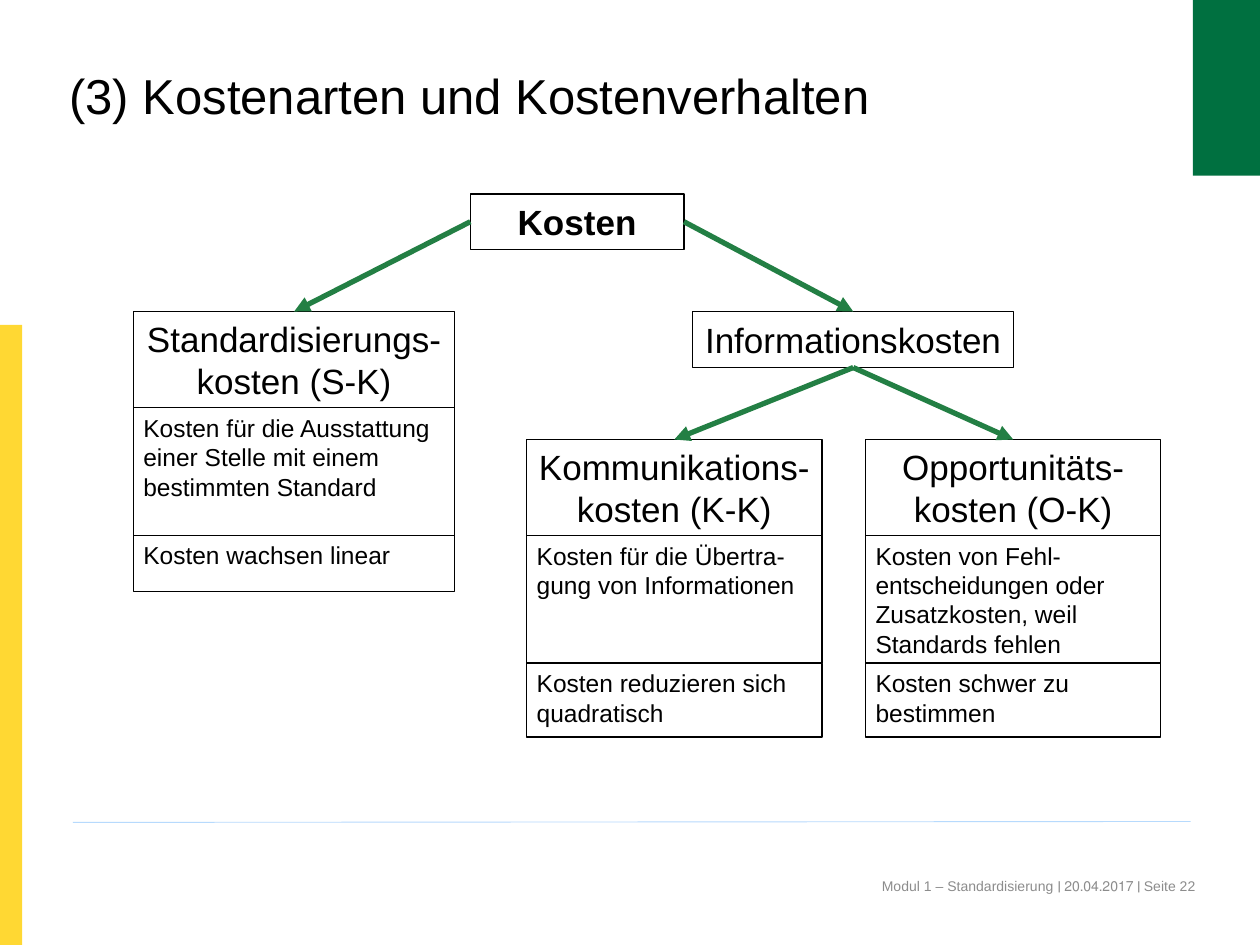
from lxml import etree
from pptx import Presentation
from pptx.dml.color import RGBColor
from pptx.enum.shapes import MSO_CONNECTOR as Link, MSO_SHAPE as Shape
from pptx.enum.text import MSO_ANCHOR as Anchor, PP_ALIGN as Align
from pptx.oxml.ns import qn
from pptx.util import Cm, Pt

COLORS = {
    "text": "000000",
    "footer": "8C8C8C",
    "arrow": "237F44",
    "rule": "B7DAFD",
    "yellow": "FFD833",
    "green": "007040",
}
TOP, LEFT, BOTTOM, RIGHT = range(4)


class CostSlide:
    font = "Arial"
    heading_size = 20
    body_size = 14

    def __init__(self, slide):
        self.slide = slide

    def color(self, name):
        return RGBColor.from_string(COLORS[name])

    def fill_frame(self, frame, text, size, color="text", bold=False, align=Align.LEFT,
                   anchor=Anchor.TOP, insets=(0, 0)):
        """Fill a frame with one paragraph; insets are horizontal and vertical in cm."""
        frame.word_wrap = True
        frame.vertical_anchor = anchor
        frame.margin_left = frame.margin_right = Cm(insets[0])
        frame.margin_top = frame.margin_bottom = Cm(insets[1])
        paragraph = frame.paragraphs[0]
        paragraph.alignment = align
        run = paragraph.add_run()
        run.text = text
        run.font.name = self.font
        run.font.size = Pt(size)
        run.font.bold = bold
        run.font.color.rgb = self.color(color)
        return paragraph

    def text(self, left, top, width, height, text, size, **style):
        label = self.slide.shapes.add_textbox(Cm(left), Cm(top), Cm(width), Cm(height))
        return self.fill_frame(label.text_frame, text, size, **style)

    def rectangle(self, left, top, width, height):
        shape = self.slide.shapes.add_shape(
            Shape.RECTANGLE, Cm(left), Cm(top), Cm(width), Cm(height))
        shape.shadow.inherit = False
        return shape

    def band(self, left, top, width, height, color):
        band = self.rectangle(left, top, width, height)
        band.fill.solid()
        band.fill.fore_color.rgb = self.color(color)
        band.line.fill.background()

    def box(self, left, top, width, height, text, size, **style):
        box = self.rectangle(left, top, width, height)
        box.fill.background()
        box.line.color.rgb = self.color("text")
        box.line.width = Pt(0.75)
        self.fill_frame(box.text_frame, text, size, insets=(0.2, 0.1), **style)
        return box

    def heading(self, left, top, width, height, text, bold=False):
        return self.box(left, top, width, height, text, self.heading_size, bold=bold,
                        align=Align.CENTER, anchor=Anchor.MIDDLE)

    def cost_type(self, left, top, width, heights, title, *details):
        """Stack a heading and its detail boxes; return the heading."""
        heading = self.heading(left, top, width, heights[0], title)
        for above, height, detail in zip(heights, heights[1:], details):
            top += above
            self.box(left, top, width, height, detail, self.body_size)
        return heading

    def line(self, start, end, color, width):
        line = self.slide.shapes.add_connector(
            Link.STRAIGHT, *(Cm(value) for value in (*start, *end)))
        line.line.color.rgb = self.color(color)
        line.line.width = Pt(width)
        etree.SubElement(line._element.spPr, qn("a:effectLst"))
        return line

    def arrow(self, parent, side, child):
        arrow = self.line((0, 0), (0, 0), "arrow", 3)
        arrow.begin_connect(parent, side)
        arrow.end_connect(child, TOP)
        etree.SubElement(arrow.get_or_add_ln(), qn("a:tailEnd"), type="triangle")


def main():
    presentation = Presentation()
    presentation.slide_width, presentation.slide_height = Cm(25.4), Cm(19.05)
    page = CostSlide(presentation.slides.add_slide(presentation.slide_layouts[6]))

    page.band(0, 6.55, 0.45, 12.5, "yellow")
    page.band(24.05, 0, 1.35, 3.54, "green")
    page.text(12.7, 17.7, 11.4, 1, "Modul 1 – Standardisierung ׀ 20.04.2017 ׀ Seite 22", 8,
              color="footer", align=Align.RIGHT)
    page.line((1.47, 16.58), (24, 16.56), "rule", 0.5)
    title = page.text(1.4, 1.35, 18.24, 2.57, "(3) Kostenarten und Kostenverhalten", 28)
    title.line_spacing = Pt(33)

    second_row, third_row = 6.28, 8.86
    wide, narrow = 6.48, 5.95
    title_height, detail_height = 1.94, 2.57

    costs = page.heading(9.48, 3.91, 4.31, 1.12, "Kosten", bold=True)
    information = page.heading(13.96, second_row, wide, 1.13, "Informationskosten")
    standardization = page.cost_type(
        2.69, second_row, wide, (title_height, detail_height, 1.14),
        "Standardisierungs-kosten (S-K)",
        "Kosten für die Ausstattung einer Stelle mit einem bestimmten Standard",
        "Kosten wachsen linear")
    third_heights = (title_height, detail_height, 1.49)
    communication = page.cost_type(
        10.62, third_row, narrow, third_heights,
        "Kommunikations-kosten (K-K)",
        "Kosten für die Übertra-gung von Informationen",
        "Kosten reduzieren sich quadratisch")
    opportunity = page.cost_type(
        17.45, third_row, narrow, third_heights,
        "Opportunitäts-kosten (O-K)",
        "Kosten von Fehl-entscheidungen oder Zusatzkosten, weil Standards fehlen",
        "Kosten schwer zu bestimmen")

    page.arrow(costs, LEFT, standardization)
    page.arrow(costs, RIGHT, information)
    page.arrow(information, BOTTOM, communication)
    page.arrow(information, BOTTOM, opportunity)

    presentation.save("out.pptx")


if __name__ == "__main__":
    main()
